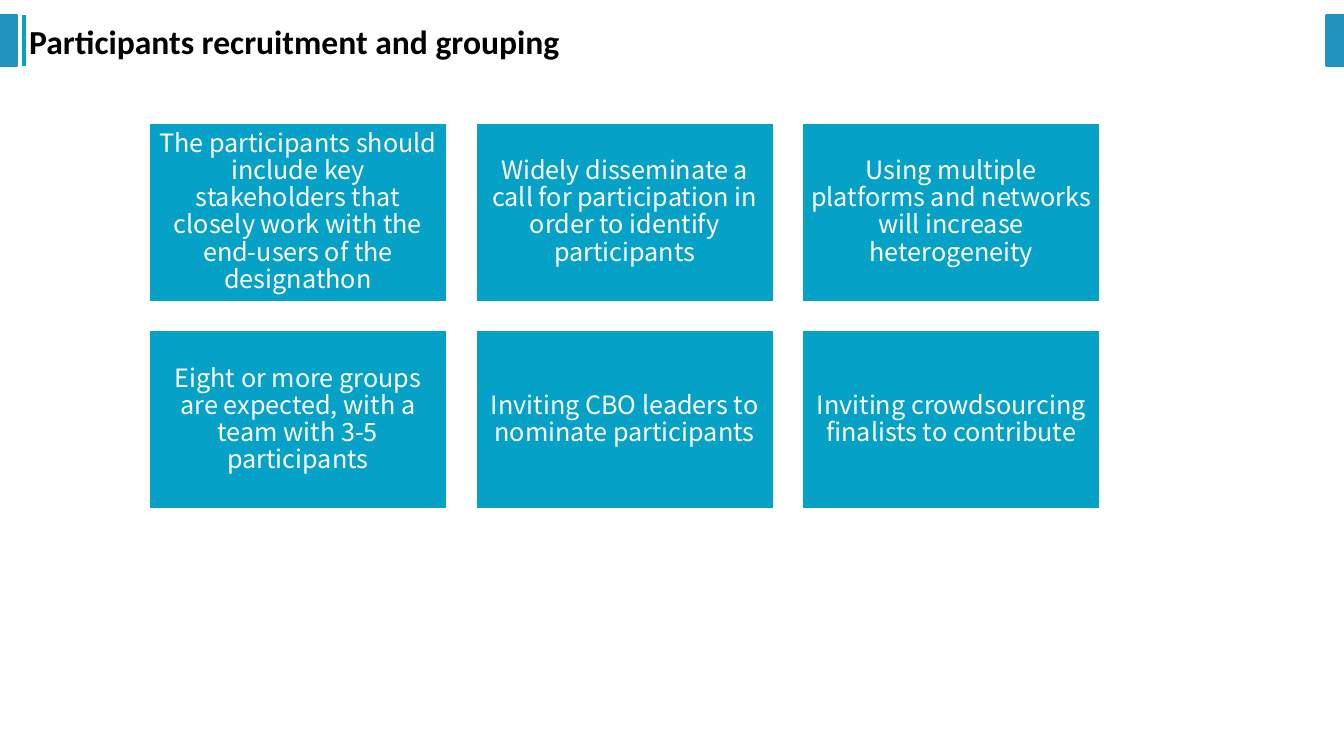
from lxml import etree
from pptx import Presentation
from pptx.dml.color import RGBColor
from pptx.enum.shapes import MSO_CONNECTOR, MSO_SHAPE
from pptx.enum.text import MSO_ANCHOR, PP_ALIGN
from pptx.oxml.ns import qn
from pptx.util import Inches, Pt

SLIDE_W, SLIDE_H = 13.33, 7.5
BAR, TEAL, WHITE, BLACK = "2292BF", "06A1C6", "FFFFFF", "000000"
CARDS = [
    "The participants should include key stakeholders that closely work with the end-users of the designathon",
    "Widely disseminate a call for participation in order to identify participants",
    "Using multiple platforms and networks will increase heterogeneity",
    "Eight or more groups are expected, with a team with 3-5 participants",
    "Inviting CBO leaders to nominate participants",
    "Inviting crowdsourcing finalists to contribute",
]


def rgb(value):
    """Turn a hex string into a colour."""
    return RGBColor.from_string(value)


def add_rect(s, x, y, w, h, fill, line, weight):
    """Add a filled, outlined rectangle without a shadow."""
    sp = s.shapes.add_shape(MSO_SHAPE.RECTANGLE, Inches(x), Inches(y), Inches(w), Inches(h))
    sp.shadow.inherit = False
    sp.fill.solid()
    sp.fill.fore_color.rgb = rgb(fill)
    sp.line.color.rgb = rgb(line)
    sp.line.width = Pt(weight)
    return sp


def set_text(sp, text, font, size, color, align, spacing, bold=False):
    """Write one vertically centred paragraph into a shape."""
    tf = sp.text_frame
    tf.word_wrap = True
    tf.vertical_anchor = MSO_ANCHOR.MIDDLE
    p = tf.paragraphs[0]
    p.text = text
    p.alignment = align
    p.line_spacing = spacing
    p.font.name = font
    p.font.size = Pt(size)
    p.font.bold = bold
    p.font.color.rgb = rgb(color)
    return tf


def add_header(s, x, y, w, h, title):
    """Draw the title between the two edge bars of the header band."""
    bar_w = 0.17
    for left in (x, x + w - bar_w):
        add_rect(s, left, y, bar_w, h, BAR, BAR, 2)
    rule_x = Inches(x + 0.24)
    rule = s.shapes.add_connector(MSO_CONNECTOR.STRAIGHT, rule_x, Inches(y), rule_x, Inches(y + h))
    rule.line.color.rgb = rgb(TEAL)
    rule.line.width = Pt(3)
    etree.SubElement(rule._element.spPr, qn("a:effectLst"))
    box = s.shapes.add_textbox(Inches(x + 0.19), Inches(y - 0.09), Inches(7.02), Inches(0.62))
    set_text(box, title, "Calibri", 24, BLACK, PP_ALIGN.JUSTIFY, 1.2, bold=True)


def add_cards(s, x, y, w, h, texts, cols=3, gap=0.29):
    """Fill a box with an even grid of text cards."""
    rows = -(-len(texts) // cols)
    card_w = (w - gap * (cols - 1)) / cols
    card_h = (h - gap * (rows - 1)) / rows
    for i, text in enumerate(texts):
        row, col = divmod(i, cols)
        sp = add_rect(s, x + col * (card_w + gap), y + row * (card_h + gap),
                      card_w, card_h, TEAL, WHITE, 1)
        tf = set_text(sp, text, "Noto Sans CJK SC", 18, WHITE, PP_ALIGN.CENTER, 0.9)
        tf.margin_left = tf.margin_right = tf.margin_top = tf.margin_bottom = Inches(0.07)


def main():
    """Build and save the slide."""
    prs = Presentation()
    prs.slide_width, prs.slide_height = Inches(SLIDE_W), Inches(SLIDE_H)
    s = prs.slides.add_slide(prs.slide_layouts[6])
    add_header(s, 0, 0.15, SLIDE_W, 0.5, "Participants recruitment and grouping")
    add_cards(s, 1.48, 1.22, 9.43, 3.83, CARDS)
    prs.save("out.pptx")


if __name__ == "__main__":
    main()
